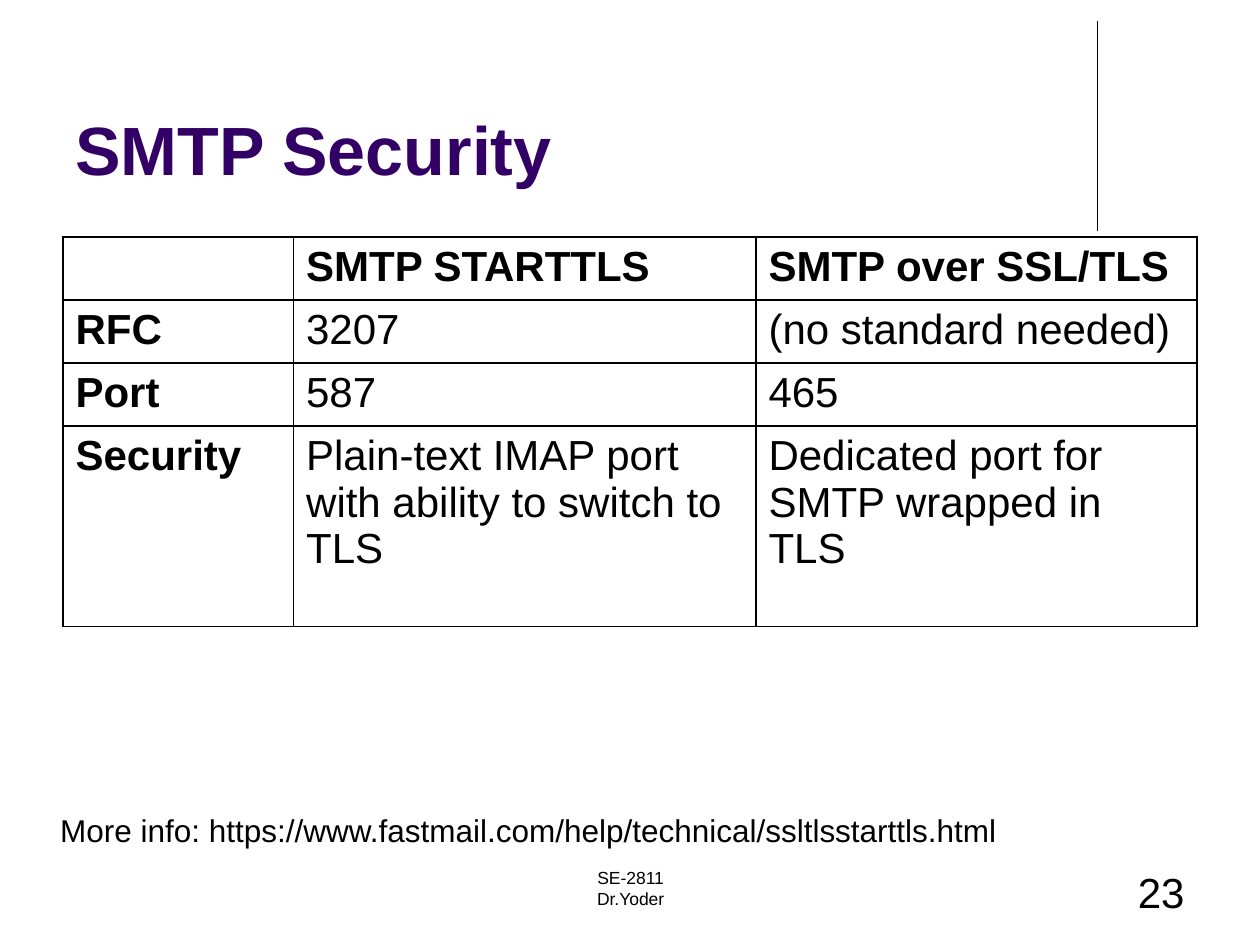
"""Build the SMTP Security slide."""
from lxml.etree import SubElement
from pptx import Presentation
from pptx.dml.color import RGBColor
from pptx.enum.shapes import MSO_CONNECTOR as Line
from pptx.enum.text import MSO_ANCHOR as Anchor, PP_ALIGN as Align
from pptx.oxml import parse_xml
from pptx.oxml.ns import nsdecls, qn
from pptx.util import Inches, Pt

BLACK = RGBColor(0, 0, 0)
PURPLE = RGBColor(0x33, 0x00, 0x66)

TITLE = "SMTP Security"
ROWS = [
    ["", "SMTP STARTTLS", "SMTP over SSL/TLS"],
    ["RFC", "3207", "(no standard needed)"],
    ["Port", "587", "465"],
    ["Security", "Plain-text IMAP port with ability to switch to TLS",
     "Dedicated port for SMTP wrapped in TLS"],
]
WIDTHS = [1.83, 3.67, 3.5]
HEIGHTS = [0.47, 0.47, 0.47, 1.59]
INFO = "More info: https://www.fastmail.com/help/technical/ssltlsstarttls.html"
FOOTER = ["SE-2811", "Dr.Yoder"]
NUMBER = "23"


def write(frame, *lines, size=24, color=BLACK, bold=False, align=Align.LEFT):
    frame.word_wrap = True
    for i, line in enumerate(lines):
        para = frame.add_paragraph() if i else frame.paragraphs[0]
        para.alignment = align
        run = para.add_run()
        run.text = line
        font = run.font
        font.name, font.size, font.bold = "Arial", Pt(size), bold
        font.color.rgb = color


def add_box(slide, *area):
    return slide.shapes.add_textbox(*map(Inches, area)).text_frame


def add_edges(cell):
    props = cell._tc.get_or_add_tcPr()
    for i, side in enumerate(("lnL", "lnR", "lnT", "lnB")):
        props.insert(i, parse_xml(
            f'<a:{side} {nsdecls("a")} w="{Pt(1)}"><a:solidFill>'
            f'<a:srgbClr val="{BLACK}"/></a:solidFill></a:{side}>'))


def add_grid(slide):
    area = map(Inches, (0.5, 1.88, sum(WIDTHS), sum(HEIGHTS)))
    table = slide.shapes.add_table(len(ROWS), len(WIDTHS), *area).table
    table.first_row = table.horz_banding = False
    for col, width in zip(table.columns, WIDTHS):
        col.width = Inches(width)
    for r, (row, height) in enumerate(zip(ROWS, HEIGHTS)):
        table.rows[r].height = Inches(height)
        for c, text in enumerate(row):
            cell = table.cell(r, c)
            cell.fill.background()
            add_edges(cell)
            if text:
                write(cell.text_frame, text, bold=r == 0 or c == 0)


def main():
    deck = Presentation()
    deck.slide_width, deck.slide_height = Inches(10), Inches(7.5)
    slide = deck.slides.add_slide(deck.slide_layouts[6])

    rule = slide.shapes.add_connector(
        Line.STRAIGHT, *map(Inches, (8.71, 0.17, 8.71, 1.83)))
    rule.line.color.rgb, rule.line.width = BLACK, Pt(0.75)
    SubElement(rule._element.spPr, qn("a:effectLst"))

    title = add_box(slide, 0.5, 0.13, 8.25, 1.42)
    title.vertical_anchor = Anchor.BOTTOM
    write(title, TITLE, size=39, color=PURPLE, bold=True)

    add_grid(slide)
    write(add_box(slide, 3.42, 6.83, 3.17, 0.5), *FOOTER,
          size=10, align=Align.CENTER)
    write(add_box(slide, 7.17, 6.83, 2.33, 0.5), NUMBER, align=Align.RIGHT)
    write(add_box(slide, 0.38, 6.39, 8.5, 0.4), INFO, size=18)
    deck.save("out.pptx")


if __name__ == "__main__":
    main()
